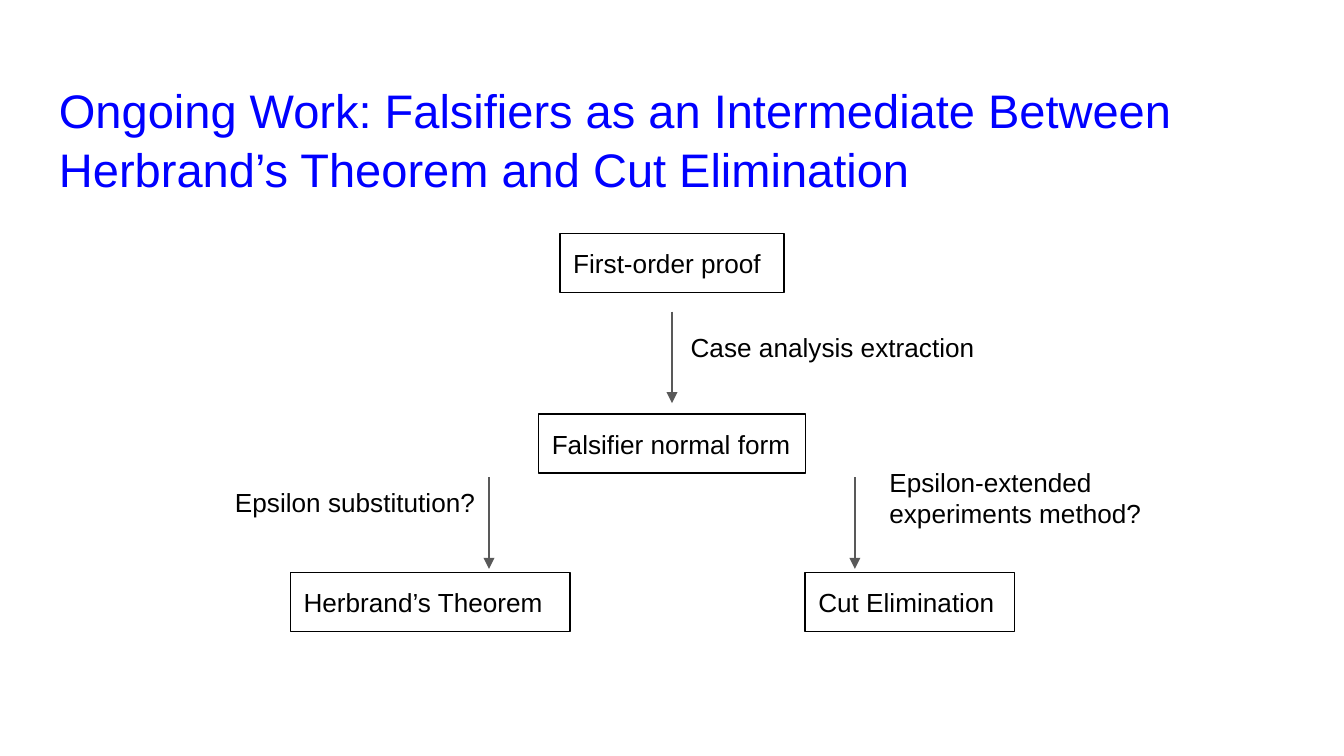
from lxml.etree import SubElement
from pptx import Presentation
from pptx.dml.color import RGBColor
from pptx.enum.shapes import MSO_CONNECTOR, MSO_SHAPE
from pptx.enum.text import MSO_ANCHOR, PP_ALIGN
from pptx.oxml.ns import qn
from pptx.util import Pt

COLORS = {"title": "0000FF", "text": "000000", "box": "000000",
          "label": "FFFFFF", "arrow": "595959"}
TITLE = ("Ongoing Work: Falsifiers as an Intermediate Between "
         "Herbrand’s Theorem and Cut Elimination")
MID = 360       # centre of the slide
SIDE = 98       # distance of the side arrows from the centre
ROW = 31.7      # height of a one-line box
DROP = 49       # length of an arrow

# text, left, top, width
BOXES = [
    ("First-order proof", MID - 60, 125.2, 120),
    ("Falsifier normal form", MID - 71.5, 221.8, 143),
    ("Herbrand’s Theorem", 155.5, 306.6, 149.8),
    ("Cut Elimination", 431.3, 306.6, 112.3),
]
# text, left, top, width, height, line
LABELS = [
    ("Case analysis extraction", 362.9, 170, 167.8, ROW, "label"),
    ("Epsilon substitution?", 118.8, 253.4, 149.8, ROW, None),
    ("Epsilon-extended experiments method?", 469.4, 242.6, 167.8, 48.2, "label"),
]
# x, top
ARROWS = [(MID, 167), (MID - SIDE, 255.8), (MID + SIDE, 255.8)]


def tint(name):
    return RGBColor.from_string(COLORS[name])


def write(shape, text, size=14, color="text", anchor=MSO_ANCHOR.MIDDLE, pitch=1.0):
    frame = shape.text_frame
    frame.word_wrap = True
    frame.vertical_anchor = anchor
    frame.margin_left = frame.margin_right = Pt(7.2)
    frame.margin_top = frame.margin_bottom = Pt(7.2)
    para = frame.paragraphs[0]
    para.alignment = PP_ALIGN.LEFT
    para.line_spacing = pitch
    run = para.add_run()
    run.text = text
    run.font.name = "Arial"
    run.font.size = Pt(size)
    run.font.color.rgb = tint(color)


def block(slide, text, left, top, width, height=ROW, line="box"):
    """Add an unfilled rectangle with text; line names its outline colour."""
    shape = slide.shapes.add_shape(
        MSO_SHAPE.RECTANGLE, Pt(left), Pt(top), Pt(width), Pt(height))
    shape.shadow.inherit = False
    shape.fill.background()
    if line:
        shape.line.color.rgb = tint(line)
        shape.line.width = Pt(0.75)
    else:
        shape.line.fill.background()
    write(shape, text)


def arrow(slide, x, top):
    link = slide.shapes.add_connector(
        MSO_CONNECTOR.STRAIGHT, Pt(x), Pt(top), Pt(x), Pt(top + DROP))
    link.line.color.rgb = tint("arrow")
    link.line.width = Pt(0.75)
    SubElement(link.line._get_or_add_ln(), qn("a:tailEnd"),
               type="triangle", w="med", len="med")
    SubElement(link._element.spPr, qn("a:effectLst"))


def main():
    deck = Presentation()
    deck.slide_width, deck.slide_height = Pt(720), Pt(405)
    slide = deck.slides.add_slide(deck.slide_layouts[6])
    title = slide.shapes.add_textbox(Pt(24.5), Pt(35), Pt(671), Pt(45.1))
    write(title, TITLE, size=25.2, color="title", anchor=MSO_ANCHOR.TOP, pitch=1.05)
    for spot in ARROWS:
        arrow(slide, *spot)
    for item in BOXES + LABELS:
        block(slide, *item)
    deck.save("out.pptx")


if __name__ == "__main__":
    main()
